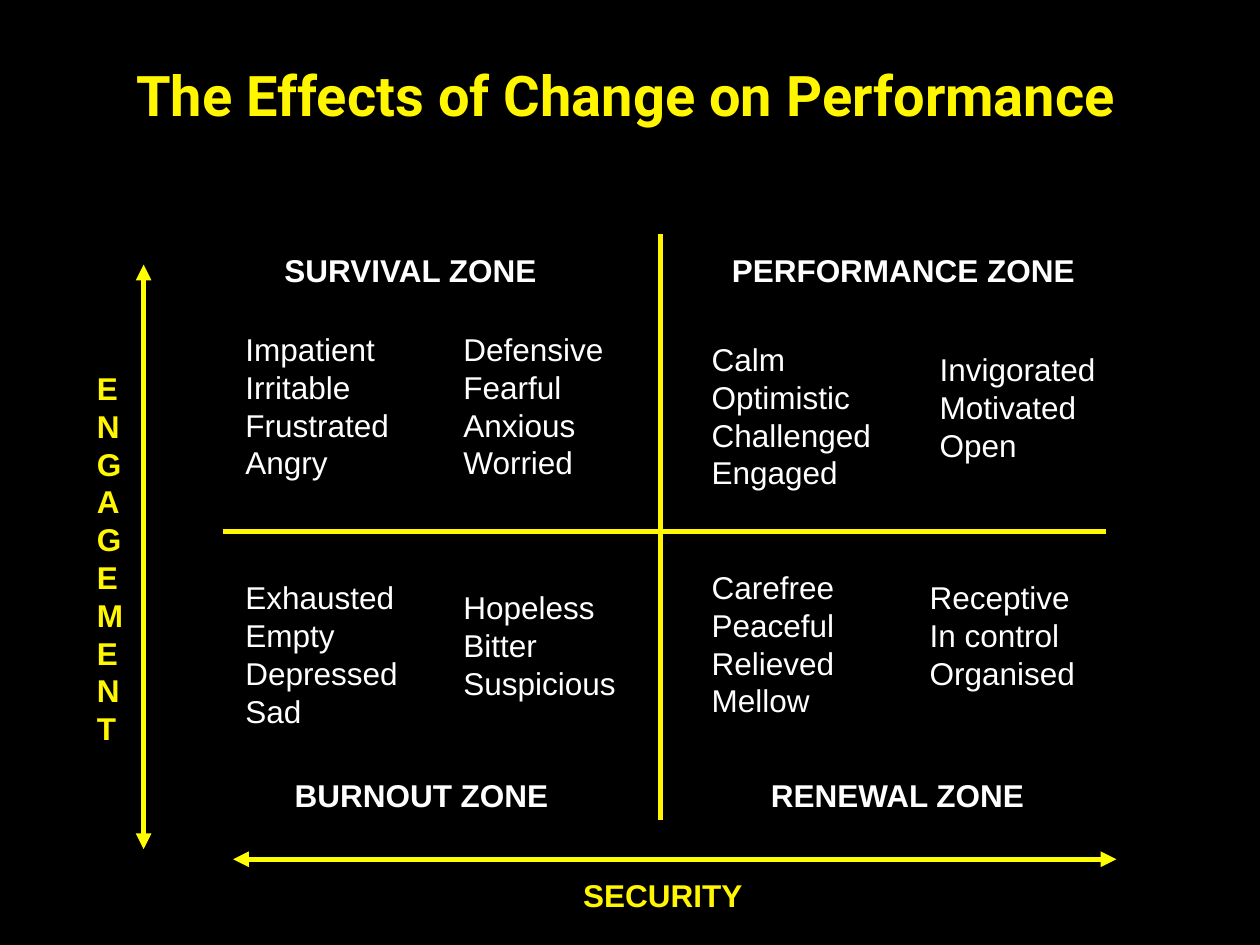
from lxml import etree
from pptx import Presentation
from pptx.dml.color import RGBColor
from pptx.enum.shapes import MSO_CONNECTOR
from pptx.enum.text import MSO_AUTO_SIZE, PP_ALIGN
from pptx.oxml.ns import qn
from pptx.util import Inches, Pt

STRAIGHT = MSO_CONNECTOR.STRAIGHT
LEFT, CENTER = PP_ALIGN.LEFT, PP_ALIGN.CENTER
GROW = MSO_AUTO_SIZE.SHAPE_TO_FIT_TEXT

COLORS = {"background": "000000", "text": "FFFFFF", "accent": "FFF600", "arrow": "FFFF00"}

ZONES = [
    ("SURVIVAL ZONE", 2.16, 1.94, 2.23),
    ("PERFORMANCE ZONE", 5.71, 1.94, 2.92),
    ("RENEWAL ZONE", 6.02, 6.11, 2.23),
    ("BURNOUT ZONE", 2.24, 6.11, 2.22),
]
FEELINGS = [
    (1.85, 2.57, ["Impatient", "Irritable", "Frustrated", "Angry"]),
    (3.58, 2.57, ["Defensive", "Fearful", "Anxious", "Worried"]),
    (5.55, 2.65, ["Calm", "Optimistic", "Challenged", "Engaged"]),
    (7.36, 2.73, ["Invigorated", "Motivated", "Open"]),
    (5.55, 4.46, ["Carefree", "Peaceful", "Relieved", "Mellow"]),
    (7.28, 4.54, ["Receptive", "In control", "Organised"]),
    (1.85, 4.54, ["Exhausted", "Empty", "Depressed", "Sad"]),
    (3.58, 4.62, ["Hopeless", "Bitter", "Suspicious"]),
]


def rgb(name):
    return RGBColor.from_string(COLORS[name])


def add_text(s, lines, x, y, w, size=18, font="Arial", color="text",
             bold=False, align=LEFT, wrap=True):
    h = 0.1 + len(lines) * size / 60
    sp = s.shapes.add_textbox(Inches(x), Inches(y), Inches(w), Inches(h))
    tf = sp.text_frame
    tf.word_wrap = wrap
    tf.auto_size = GROW
    for i, line in enumerate(lines):
        p = tf.paragraphs[0] if i == 0 else tf.add_paragraph()
        p.alignment = align
        r = p.add_run()
        r.text = line
        r.font.size = Pt(size)
        r.font.name = font
        r.font.bold = bold
        r.font.color.rgb = rgb(color)


def add_line(s, x1, y1, x2, y2, color="accent", arrows=False):
    line = s.shapes.add_connector(STRAIGHT, Inches(x1), Inches(y1), Inches(x2), Inches(y2))
    line.line.color.rgb = rgb(color)
    line.line.width = Pt(3)
    if arrows:
        ln = line.line._get_or_add_ln()
        for end in ("a:headEnd", "a:tailEnd"):
            etree.SubElement(ln, qn(end), type="triangle")
    etree.SubElement(line._element.spPr, qn("a:effectLst"))


def main():
    prs = Presentation()
    prs.slide_width, prs.slide_height = Inches(10), Inches(7.5)
    s = prs.slides.add_slide(prs.slide_layouts[6])
    s.background.fill.solid()
    s.background.fill.fore_color.rgb = rgb("background")

    add_text(s, ["The Effects of Change on Performance"], 0.43, 0.43, 9.08,
             size=32, font="Roboto", color="accent", bold=True, align=CENTER)
    add_line(s, 5.24, 1.86, 5.24, 6.51)
    add_line(s, 1.77, 4.22, 8.78, 4.22)
    for name, x, y, w in ZONES:
        add_text(s, [name], x, y, w, bold=True, wrap=False)
    for x, y, words in FEELINGS:
        add_text(s, words, x, y, 1.57)

    add_line(s, 1.14, 2.1, 1.14, 6.74, color="arrow", arrows=True)
    add_line(s, 1.85, 6.82, 8.86, 6.82, color="arrow", arrows=True)
    add_text(s, ["SECURITY"], 4.53, 6.9, 1.47, color="accent", bold=True, wrap=False)
    add_text(s, list("ENGAGEMENT"), 0.67, 2.88, 0.41, color="accent", bold=True)
    prs.save("out.pptx")


if __name__ == "__main__":
    main()
